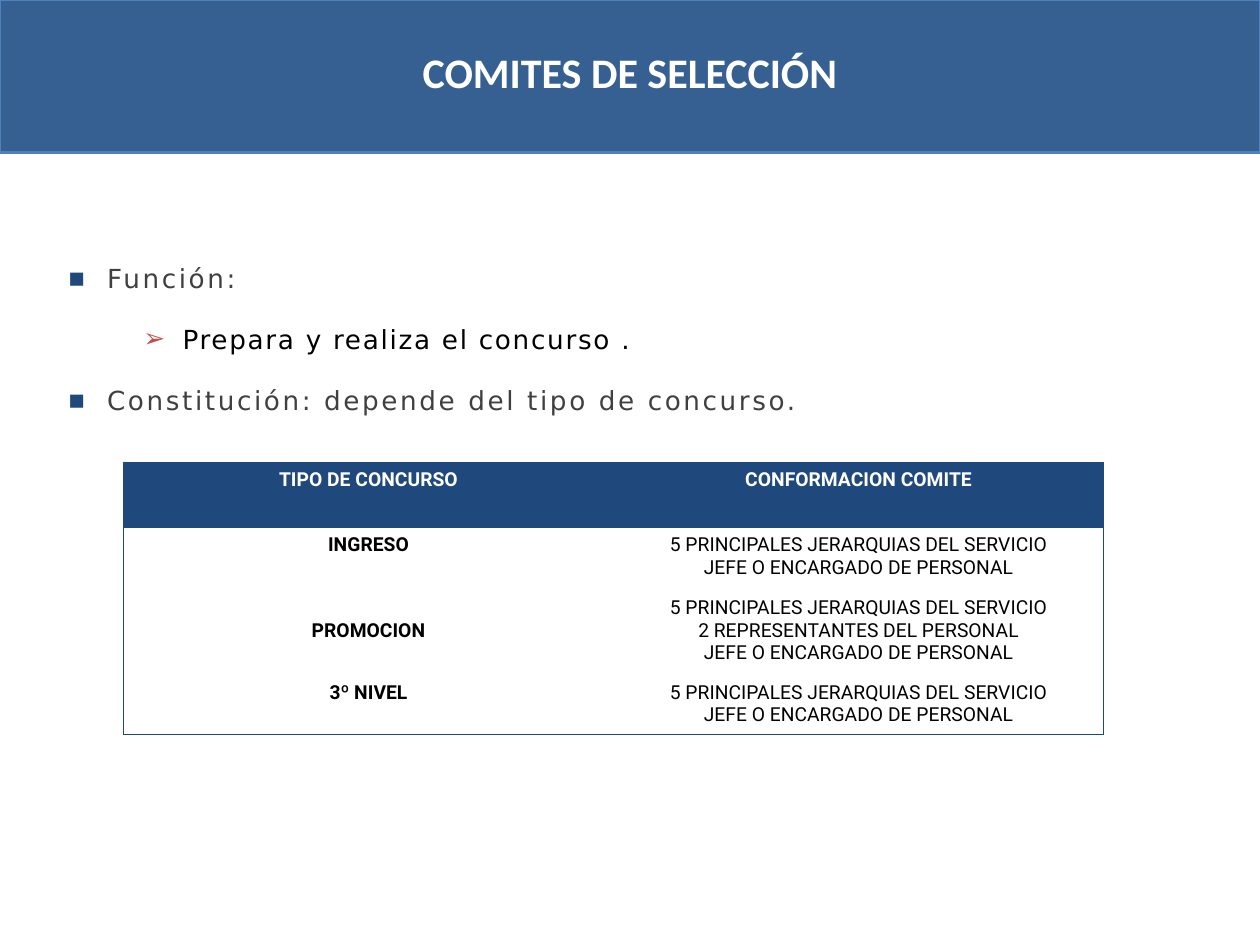
from dataclasses import dataclass

from lxml.etree import SubElement
from pptx import Presentation
from pptx.dml.color import RGBColor
from pptx.enum.shapes import MSO_SHAPE
from pptx.enum.text import PP_ALIGN
from pptx.oxml import parse_xml
from pptx.oxml.ns import nsdecls, qn
from pptx.util import Cm, Pt


@dataclass(frozen=True)
class Theme:
    band: str = "376092"
    band_line: str = "4F81BD"
    navy: str = "1F497D"
    red: str = "C0504D"
    gray: str = "404040"
    black: str = "000000"
    white: str = "FFFFFF"
    title_font: str = "Calibri"
    body_font: str = "DejaVu Sans"
    table_font: str = "Roboto"
    title_size: float = 24
    body_size: float = 15
    table_size: float = 11
    border: float = 0.79


THEME = Theme()
TITLE = {"name": THEME.title_font, "size": Pt(THEME.title_size), "bold": True}
BODY = {"name": THEME.body_font, "size": Pt(THEME.body_size)}
TABLE = {"name": THEME.table_font, "size": Pt(THEME.table_size)}

# Bullet levels: sign, sign colour, text colour, text indent in cm, letter spacing in points
LEVELS = [
    ("▪", THEME.navy, THEME.gray, 0.79, 1.5),
    ("➢", THEME.red, THEME.black, 2.31, 1),
]
HANGING = 0.79
BULLETS = [
    (0, "Función:"),
    (1, "Prepara y realiza el concurso ."),
    (0, "Constitución: depende del tipo de concurso."),
]

HEADINGS = ["TIPO DE CONCURSO", "CONFORMACION COMITE"]
HIERARCHY = "5 PRINCIPALES JERARQUIAS DEL SERVICIO"
STAFF = "2 REPRESENTANTES DEL PERSONAL"
CHIEF = "JEFE O ENCARGADO DE PERSONAL"
COMMITTEES = [
    ("INGRESO", [HIERARCHY, CHIEF]),
    ("PROMOCION", [HIERARCHY, STAFF, CHIEF]),
    ("3º NIVEL", [HIERARCHY, CHIEF]),
]
ROW_HEIGHTS = [1.32, 1.27, 1.7, 1.2]
PROMOTION_ROW = 2


def add_span(para, text, color, formats):
    span = para.add_run()
    span.text = text
    for name, value in formats.items():
        setattr(span.font, name, value)
    span.font.color.rgb = RGBColor.from_string(color)
    return span


def add_text_frame(page, left, top, width, height):
    frame = page.shapes.add_textbox(Cm(left), Cm(top), Cm(width), Cm(height)).text_frame
    frame.word_wrap = True
    return frame


def add_header(page, left, top, width, height):
    # Colour band
    band = page.shapes.add_shape(MSO_SHAPE.RECTANGLE, Cm(left), Cm(top), Cm(width), Cm(height))
    band.shadow.inherit = False
    band.fill.solid()
    band.fill.fore_color.rgb = RGBColor.from_string(THEME.band)
    band.line.color.rgb = RGBColor.from_string(THEME.band_line)
    band.line.width = Pt(1.5)

    # Title
    frame = add_text_frame(page, left + 1.12, top + 0.82, width - 2.24, 2.08)
    para = frame.paragraphs[0]
    para.alignment = PP_ALIGN.CENTER
    add_span(para, "COMITES DE SELECCIÓN", THEME.white, TITLE)


def set_bullet(para, sign, color, indent):
    properties = para._p.get_or_add_pPr()
    properties.set("marL", str(Cm(indent)))
    properties.set("indent", str(-Cm(HANGING)))
    bullet_color = SubElement(properties, qn("a:buClr"))
    SubElement(bullet_color, qn("a:srgbClr"), val=color)
    SubElement(properties, qn("a:buFont"), typeface=THEME.body_font)
    SubElement(properties, qn("a:buChar"), char=sign)


def add_bullets(page, left, top, width, height):
    frame = add_text_frame(page, left, top, width, height)
    for index, (level, text) in enumerate(BULLETS):
        sign, sign_color, color, indent, spacing = LEVELS[level]
        para = frame.add_paragraph() if index else frame.paragraphs[0]
        set_bullet(para, sign, sign_color, indent)
        para.alignment = PP_ALIGN.JUSTIFY
        para.line_spacing = 0.8
        if index:
            para.space_before = Pt(20.5)
        span = add_span(para, text, color, BODY)
        span.font._element.set("spc", str(int(spacing * 100)))


def set_borders(cell, sides):
    properties = cell._tc.get_or_add_tcPr()
    for position, side in enumerate("LRTB"):
        paint = "<a:noFill/>"
        if side in sides:
            paint = f'<a:solidFill><a:srgbClr val="{THEME.navy}"/></a:solidFill>'
        line = f'<a:ln{side} {nsdecls("a")} w="{Pt(THEME.border)}">{paint}</a:ln{side}>'
        properties.insert(position, parse_xml(line))


def fill_cell(cell, lines, color, bold):
    for index, text in enumerate(lines):
        para = cell.text_frame.add_paragraph() if index else cell.text_frame.paragraphs[0]
        para.alignment = PP_ALIGN.CENTER
        add_span(para, text, color, {**TABLE, "bold": bold})


def add_committee_table(page, left, top, width):
    rows = [[[heading] for heading in HEADINGS]]
    rows += [[[kind], members] for kind, members in COMMITTEES]
    last = len(rows) - 1
    table = page.shapes.add_table(
        len(rows), 2, Cm(left), Cm(top), Cm(width), Cm(sum(ROW_HEIGHTS))
    ).table
    table.first_row = table.horz_banding = False
    for column in table.columns:
        column.width = Cm(width / 2)

    for row, contents in enumerate(rows):
        table.rows[row].height = Cm(ROW_HEIGHTS[row])
        for column, lines in enumerate(contents):
            cell = table.cell(row, column)
            header = row == 0
            if header:
                cell.fill.solid()
                cell.fill.fore_color.rgb = RGBColor.from_string(THEME.navy)
            else:
                cell.fill.background()
            fill_cell(cell, lines, THEME.white if header else THEME.black, header or column == 0)
            # Only the outer frame is drawn
            sides = "LR"[column] + ("T" if header else "") + ("B" if row == last else "")
            set_borders(cell, sides)

    # Level with the middle line of its neighbour
    table.cell(PROMOTION_ROW, 0).margin_top = Cm(0.58)


def main():
    deck = Presentation()
    deck.slide_width, deck.slide_height = Cm(25.4), Cm(19.05)
    page = deck.slides.add_slide(deck.slide_layouts[6])
    add_header(page, 0, 0, 25.4, 3.07)
    add_bullets(page, 1.12, 5.28, 23.14, 11.79)
    add_committee_table(page, 2.49, 9.32, 19.76)
    deck.save("out.pptx")


if __name__ == "__main__":
    main()
